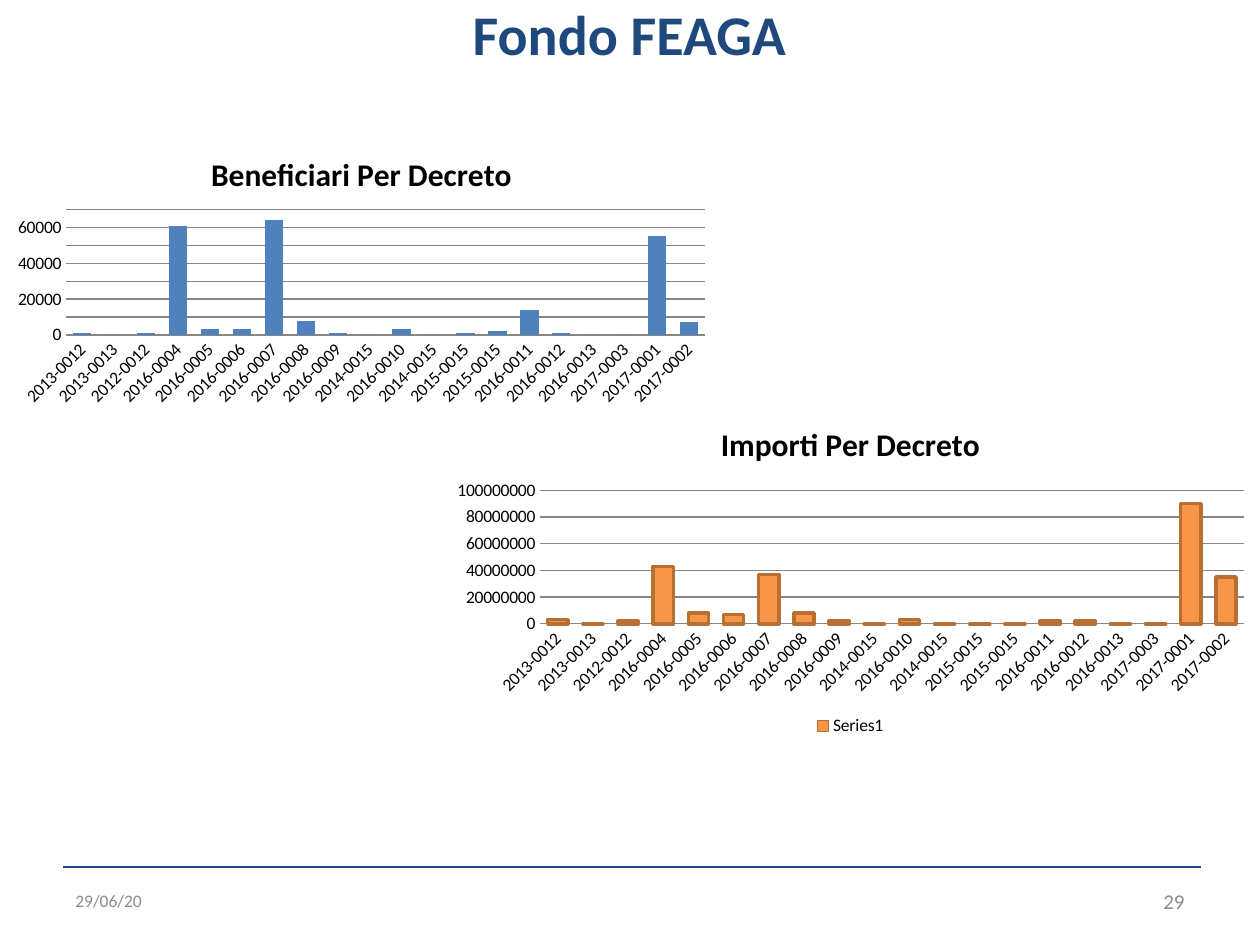
"""Build the FEAGA fund slide with beneficiaries and amounts per decree."""
from lxml import etree
from pptx import Presentation
from pptx.chart.data import CategoryChartData
from pptx.dml.color import RGBColor
from pptx.enum.chart import XL_CHART_TYPE as ChartType, XL_LEGEND_POSITION as LegendPosition, XL_TICK_MARK as TickMark
from pptx.enum.shapes import MSO_CONNECTOR as Connector
from pptx.enum.text import MSO_ANCHOR as Anchor, PP_ALIGN as Align
from pptx.oxml.ns import qn
from pptx.util import Inches, Pt

NAVY = RGBColor(0x1F, 0x49, 0x7D)
BLUE = RGBColor(0x4F, 0x81, 0xBD)
ORANGE = RGBColor(0xF7, 0x96, 0x46)
BROWN = RGBColor(0xB7, 0x6F, 0x34)
BLACK = RGBColor(0, 0, 0)
GREY = RGBColor(0x89, 0x89, 0x89)
DATE_GREY = RGBColor(0x8C, 0x8C, 0x8C)
GRID_GREY = RGBColor(0x86, 0x86, 0x86)
FONT = "Calibri"

deck = Presentation()
deck.slide_width, deck.slide_height = Inches(10), Inches(7.5)
slide = deck.slides.add_slide(deck.slide_layouts[6])


def place(left, top, width, height):
    """Turn percentages of the slide into lengths."""
    column, row = deck.slide_width / 100, deck.slide_height / 100
    return int(left * column), int(top * row), int(width * column), int(height * row)


def style(font, size, color, bold=False):
    """Set the shared typeface with a size, colour and weight."""
    font.name, font.size, font.bold = FONT, Pt(size), bold
    font.color.rgb = color


left, top, width, _ = place(5, 91.73, 90.3, 0)
footer_rule = slide.shapes.add_connector(Connector.STRAIGHT, left, top, left + width, top)
footer_rule.line.color.rgb = NAVY
footer_rule.line.width = Pt(1.5)
etree.SubElement(footer_rule.element.spPr, qn("a:effectLst"))

decrees = [
    "2013-0012", "2013-0013", "2012-0012", "2016-0004", "2016-0005",
    "2016-0006", "2016-0007", "2016-0008", "2016-0009", "2014-0015",
    "2016-0010", "2014-0015", "2015-0015", "2015-0015", "2016-0011",
    "2016-0012", "2016-0013", "2017-0003", "2017-0001", "2017-0002",
]
beneficiaries = [1000, 0, 1000, 61000, 3000, 3000, 64000, 8000, 1000, 0,
                 3000, 0, 1000, 2000, 14000, 1000, 0, 0, 55000, 7000]
millions = [3, 0, 2, 43, 8, 7, 37, 8, 2, 0, 3, 0, 0, 0, 2, 2, 0, 0, 90, 35]
amounts = [value * 1000000 for value in millions]

charts = [
    ("Beneficiari Per Decreto", "Series 1", beneficiaries, (0.3, 14.27, 56.8, 29.33), 70000, 10000, BLUE, None),
    ("Importi Per Decreto", "Series1", amounts, (35, 42.67, 65, 35.73), 100000000, 20000000, ORANGE, BROWN),
]
for heading, series_name, values, area, maximum, step, fill, outline in charts:
    data = CategoryChartData()
    data.categories = decrees
    data.add_series(series_name, values)
    chart = slide.shapes.add_chart(ChartType.COLUMN_CLUSTERED, *place(*area), data).chart
    style(chart.font, 10, BLACK)
    chart.has_title = True
    chart.chart_title.include_in_layout = False
    title = chart.chart_title.text_frame.paragraphs[0]
    title.text = heading
    style(title.font, 18, BLACK, True)

    chart.has_legend = outline is not None
    if chart.has_legend:
        chart.legend.position = LegendPosition.BOTTOM
        chart.legend.include_in_layout = False

    decree_axis, value_axis = chart.category_axis, chart.value_axis
    for axis in (decree_axis, value_axis):
        axis.major_tick_mark = axis.minor_tick_mark = TickMark.NONE
        style(axis.tick_labels.font, 10, BLACK)
    decree_axis.format.line.color.rgb = GRID_GREY
    labels = chart.element.find(".//" + qn("c:catAx")).find(qn("c:txPr"))
    labels.find(qn("a:bodyPr")).set("rot", "-2700000")
    value_axis.minimum_scale, value_axis.maximum_scale = 0, maximum
    value_axis.major_unit = step
    value_axis.format.line.fill.background()
    value_axis.major_gridlines.format.line.color.rgb = GRID_GREY
    value_axis.tick_labels.number_format = "General"
    value_axis.tick_labels.number_format_is_linked = False

    plot = chart.plots[0]
    plot.gap_width, plot.overlap, plot.vary_by_categories = 75, -25, False
    columns = plot.series[0].format
    columns.fill.solid()
    columns.fill.fore_color.rgb = fill
    if outline is None:
        columns.line.fill.background()
    else:
        columns.line.color.rgb = outline
        columns.line.width = Pt(2)

texts = [
    ("29/06/20", (5, 92.67, 23.3, 5.33), 10, DATE_GREY, False, Align.LEFT, Anchor.MIDDLE),
    ("29", (71.7, 92.67, 23.3, 5.33), 12, GREY, False, Align.RIGHT, Anchor.MIDDLE),
    ("Fondo FEAGA", (1, -0.67, 97.9, 10.8), 32, NAVY, True, Align.CENTER, Anchor.TOP),
]
for words, area, size, color, bold, alignment, anchor in texts:
    frame = slide.shapes.add_textbox(*place(*area)).text_frame
    frame.word_wrap = True
    frame.vertical_anchor = anchor
    paragraph = frame.paragraphs[0]
    paragraph.text = words
    paragraph.alignment = alignment
    style(paragraph.font, size, color, bold)

deck.save("out.pptx")
